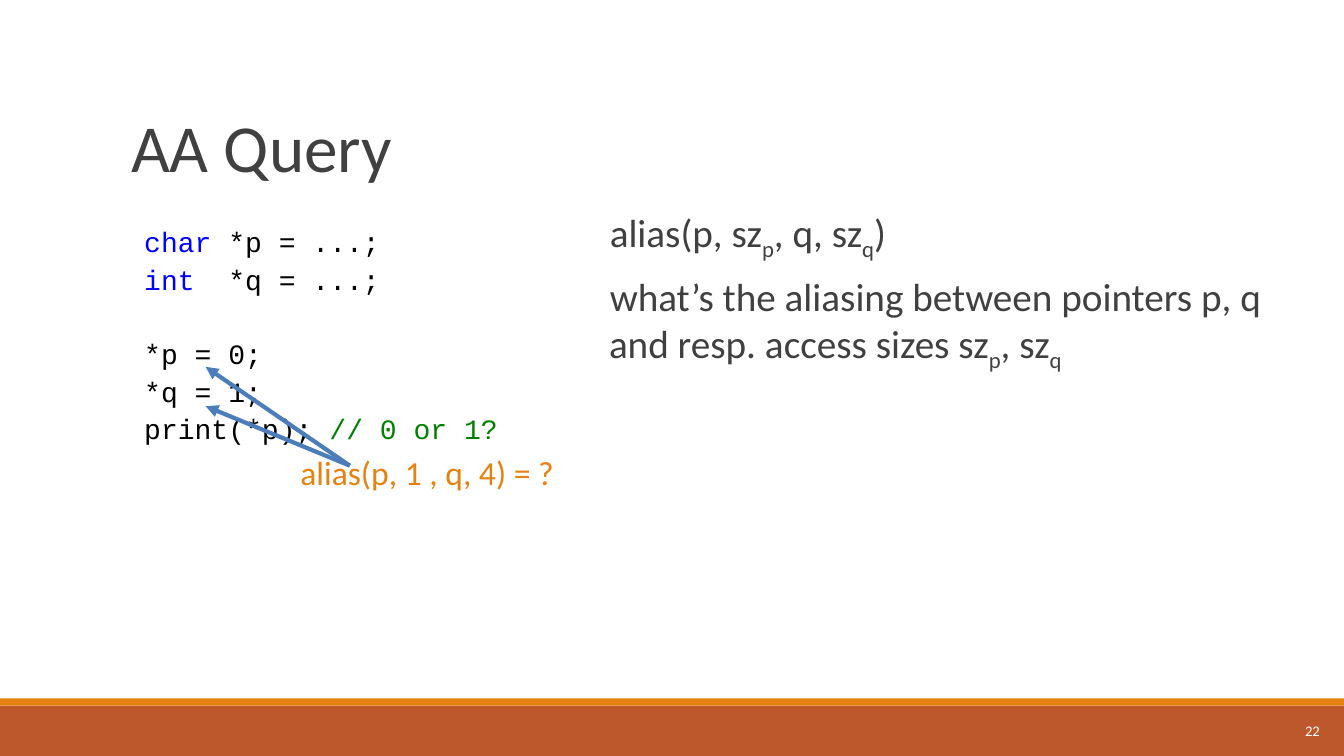
import pptx
import pptx.util
import pptx.dml.color
import pptx.enum.text
import pptx.enum.shapes
import lxml.etree
from pptx.enum.text import MSO_ANCHOR, PP_ALIGN
from pptx.util import Inches

NS = "http://schemas.openxmlformats.org/drawingml/2006/main"


def rgb(code):
    return pptx.dml.color.RGBColor.from_string(code)


def node(up, tag, **attrs):
    return lxml.etree.SubElement(up, f"{{{NS}}}{tag}", attrs)


def add_text(para, text, size=20, font="Calibri", color="404040", base=0):
    run = para.add_run()
    run.text = text
    run.font.size = pptx.util.Pt(size)
    run.font.name = font
    run.font.color.rgb = rgb(color)
    if base:
        run.font._element.set("baseline", str(base * 1000))


class Deck:
    ORANGE, RUST, BLUE = "E48312", "BD582C", "4A7DBA"

    def __init__(self):
        self.prs = pptx.Presentation()
        self.prs.slide_width = Inches(13.33)
        self.prs.slide_height = Inches(7.5)
        # Two Content layout
        self.slide = self.prs.slides.add_slide(self.prs.slide_layouts[3])

    def bar(self, top, height, color):
        kind = pptx.enum.shapes.MSO_SHAPE.RECTANGLE
        shape = self.slide.shapes.add_shape(
            kind, 0, Inches(top), self.prs.slide_width, Inches(height))
        shape.shadow.inherit = False
        shape.fill.solid()
        shape.fill.fore_color.rgb = rgb(color)
        shape.line.fill.background()

    def place(self, shape, box, anchor=MSO_ANCHOR.TOP, inset=0.1, wrap=True):
        shape.left, shape.top, shape.width, shape.height = map(Inches, box)
        frame = shape.text_frame
        frame.auto_size = pptx.enum.text.MSO_AUTO_SIZE.NONE
        frame.word_wrap = wrap
        frame.vertical_anchor = anchor
        frame.margin_left = frame.margin_right = Inches(inset)
        frame.margin_top = frame.margin_bottom = Inches(0.05)
        return frame

    def title(self, text, box):
        frame = self.place(self.slide.shapes.title, box, MSO_ANCHOR.BOTTOM)
        para = frame.paragraphs[0]
        para.alignment = PP_ALIGN.LEFT
        add_text(para, text, size=48)

    def body(self, index, box, rows, space=1.0, **style):
        """Each row is a gap above in points and a list of (text, format)."""
        frame = self.place(self.slide.placeholders[index], box, inset=0)
        for i, (gap, parts) in enumerate(rows):
            para = frame.add_paragraph() if i else frame.paragraphs[0]
            para.line_spacing = space
            para.space_before = pptx.util.Pt(gap)
            props = para._p.get_or_add_pPr()
            props.set("marL", str(Inches(0.09)))
            props.set("indent", str(Inches(-0.08)))
            node(node(props, "buClr"), "srgbClr", val=self.ORANGE)
            node(props, "buFont", typeface="Calibri")
            node(props, "buChar", char=" ")
            for text, extra in parts:
                add_text(para, text, **{**style, **extra})

    def label(self, text, box, align=PP_ALIGN.LEFT, anchor=MSO_ANCHOR.TOP,
              **style):
        shape = self.slide.shapes.add_textbox(*map(Inches, box))
        para = self.place(shape, box, anchor, wrap=False).paragraphs[0]
        para.alignment = align
        add_text(para, text, **style)

    def arrow(self, start, end):
        kind = pptx.enum.shapes.MSO_CONNECTOR.STRAIGHT
        line = self.slide.shapes.add_connector(
            kind, *map(Inches, start + end))
        line.line.color.rgb = rgb(self.BLUE)
        line.line.width = pptx.util.Pt(3)
        node(line.line._get_or_add_ln(), "tailEnd", type="triangle")
        node(line._element.spPr, "effectLst")


def main():
    deck = Deck()

    # Footer bars
    deck.bar(7, 0.5, deck.RUST)
    deck.bar(6.93, 0.07, deck.ORANGE)

    deck.title("AA Query", (1.2, 0.31, 11, 1.59))

    # Query definition
    sub = {"base": -25}
    deck.body(2, (5.95, 2.02, 6.87, 4.4), [
        (0, [("alias(p, sz", {}), ("p", sub), (", q, sz", {}), ("q", sub),
             (")", {})]),
        (14.7, [("what’s the aliasing between pointers p, q and resp. "
                 "access sizes sz", {}), ("p", sub), (", sz", {}),
                ("q", sub)]),
    ], space=0.9, size=28)

    # Code sample, with a wider gap between its two blocks
    word, note = {"color": "0000FF"}, {"color": "008000"}
    gap = 2.7
    deck.body(1, (1.34, 2.18, 3.89, 2.33), [
        (0, [("char", word), (" *p = ...;", {})]),
        (gap, [("int ", word), (" *q = ...;", {})]),
        (29.3, [("*p = 0;", {})]),
        (gap, [("*q = 1;", {})]),
        (gap, [("print(*p); ", {}), ("// 0 or 1?", note)]),
    ], font="Courier New", color="000000")

    # Arrows from the query to both stores
    for top in (3.64, 4.03):
        deck.arrow((3.47, 4.62), (2.04, top))
    deck.label("alias(p, 1 , q, 4) = ?", (2.88, 4.43, 2.71, 0.5),
               size=24, color=deck.ORANGE)

    # Slide number
    deck.label("22", (11.76, 7.05, 1.43, 0.4), PP_ALIGN.RIGHT,
               MSO_ANCHOR.MIDDLE, size=10.5, color="FFFFFF")

    deck.prs.save("out.pptx")


if __name__ == "__main__":
    main()
